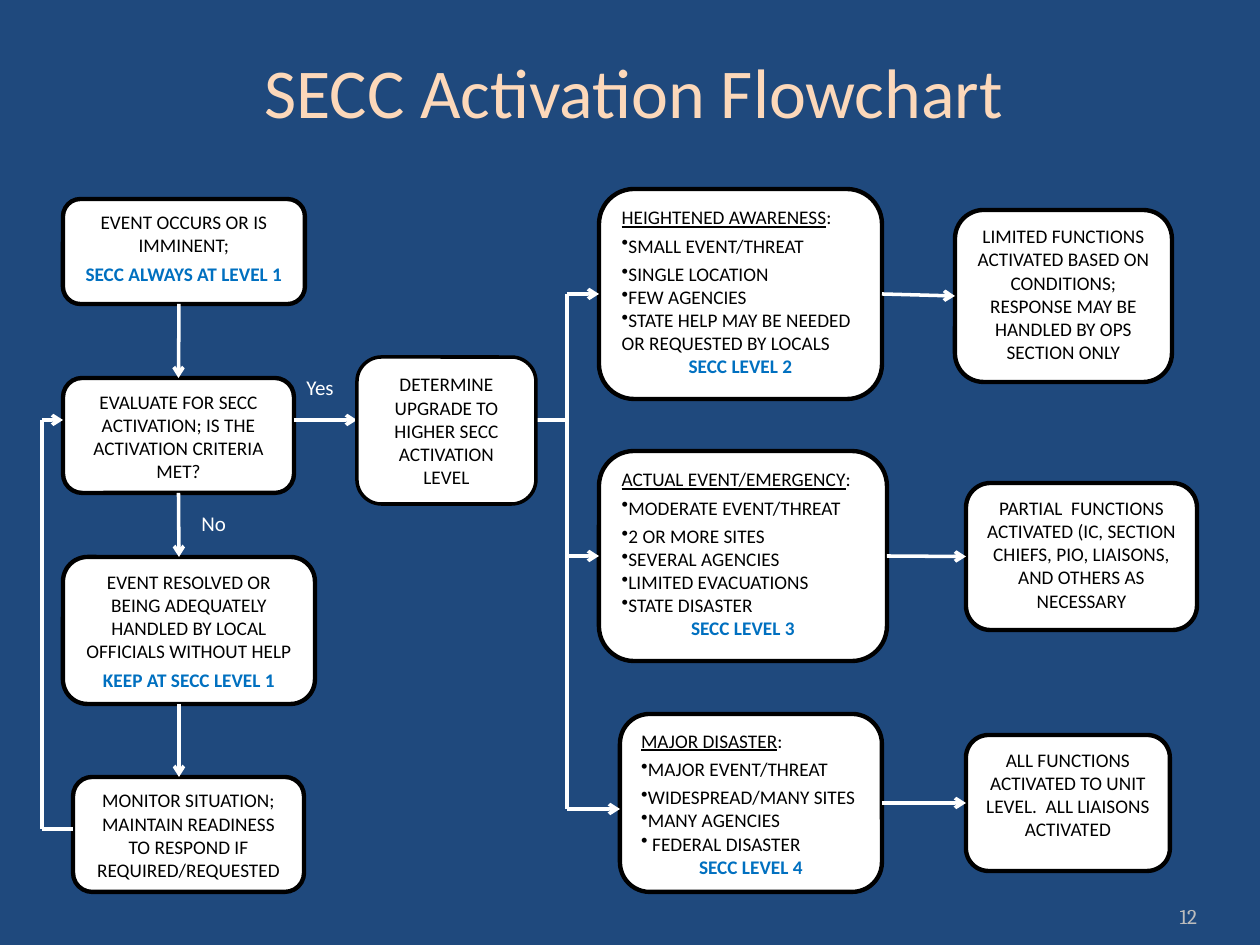
import pptx
import pptx.util
import pptx.dml.color
import pptx.enum.shapes
import pptx.enum.text
import pptx.oxml.ns
import lxml.etree

RGB = pptx.dml.color.RGBColor
NAVY = RGB(0x1F, 0x49, 0x7D)
WHITE = RGB(0xFF, 0xFF, 0xFF)
BLACK = RGB(0, 0, 0)
BLUE = RGB(0, 0x70, 0xC0)
PEACH = RGB(0xFC, 0xD8, 0xBA)
GRAY = RGB(0xBD, 0xBD, 0xBD)

ALIGN = pptx.enum.text.PP_ALIGN
ANCHOR = pptx.enum.text.MSO_ANCHOR
TOP, LEFT, BOTTOM, RIGHT = range(4)


def px(length):
    return round(length * 914400 / 126)


def add_xml(parent, tag, **attributes):
    return lxml.etree.SubElement(parent, pptx.oxml.ns.qn(tag), **attributes)


class Flowchart:
    font = "Calibri"
    body_size = 11
    gap = pptx.util.Pt(3)

    def __init__(self, deck):
        self.page = deck.slides.add_slide(deck.slide_layouts[6])
        self.page.background.fill.solid()
        self.page.background.fill.fore_color.rgb = NAVY

    def style(self, para, size, color, align=ALIGN.LEFT, bold=False, font=None):
        para.alignment = align
        para.font.name = font or self.font
        para.font.size = pptx.util.Pt(size)
        para.font.color.rgb = color
        para.font.bold = bold

    def text(self, place, words, size, color, align=ALIGN.LEFT, font=None, wrap=True):
        box = self.page.shapes.add_textbox(*map(px, place))
        frame = box.text_frame
        frame.word_wrap = wrap
        frame.text = words
        self.style(frame.paragraphs[0], size, color, align, font=font)
        return frame

    def box(self, place, line_width=2.5, anchor=ANCHOR.TOP):
        kind = pptx.enum.shapes.MSO_SHAPE.ROUNDED_RECTANGLE
        box = self.page.shapes.add_shape(kind, *map(px, place))
        box.shadow.inherit = False
        box.fill.solid()
        box.fill.fore_color.rgb = WHITE
        box.line.color.rgb = BLACK
        box.line.width = pptx.util.Pt(line_width)
        box.text_frame.word_wrap = True
        box.text_frame.vertical_anchor = anchor
        return box

    def step(self, place, words, level=None, **options):
        box = self.box(place, **options)
        para = box.text_frame.paragraphs[0]
        para.text = words
        para.space_after = self.gap
        self.style(para, self.body_size, BLACK, ALIGN.CENTER)
        if level:
            self.level(box, level)
        return box

    def level(self, box, words):
        para = box.text_frame.add_paragraph()
        para.text = words
        para.space_after = self.gap
        self.style(para, self.body_size, BLUE, ALIGN.CENTER, bold=True)

    def criteria(self, place, heading, items, level):
        box = self.box(place)
        para = box.text_frame.paragraphs[0]
        para.space_after = self.gap
        self.style(para, self.body_size, BLACK)
        span = para.add_run()
        span.text = heading
        span.font.underline = True
        para.add_run().text = ":"
        for index, item in enumerate(items):
            para = box.text_frame.add_paragraph()
            para.text = item
            para.space_after = self.gap if index == 0 else 0
            self.style(para, self.body_size, BLACK)
            properties = para._p.get_or_add_pPr()
            bullet = add_xml(properties, "a:buChar", char="•")
            properties.find(pptx.oxml.ns.qn("a:defRPr")).addprevious(bullet)
        self.level(box, level)
        return box

    def line(self, start, end, arrow=True, source=None, target=None):
        kind = pptx.enum.shapes.MSO_CONNECTOR.STRAIGHT
        line = self.page.shapes.add_connector(kind, *map(px, start + end))
        line.line.color.rgb = WHITE
        line.line.width = pptx.util.Pt(2)
        if arrow:
            add_xml(line.line._get_or_add_ln(), "a:tailEnd", type="arrow")
        add_xml(line._element.spPr, "a:effectLst")
        if source:
            line.begin_connect(*source)
        if target:
            line.end_connect(*target)


def main():
    deck = pptx.Presentation()
    deck.slide_width, deck.slide_height = px(1260), px(945)
    chart = Flowchart(deck)

    number = chart.text((1092, 885, 105, 50), "12", 12, GRAY, ALIGN.RIGHT, "Cambria")
    number.vertical_anchor = ANCHOR.BOTTOM
    number.margin_left = number.margin_right = 0

    chart.step((63, 199, 242, 105), "EVENT OCCURS OR IS IMMINENT;", "SECC ALWAYS AT LEVEL 1")
    evaluate = chart.step((63, 378, 231, 115),
                          "EVALUATE FOR SECC ACTIVATION; IS THE ACTIVATION CRITERIA MET?")
    chart.step((63, 557, 252, 147),
               "EVENT RESOLVED OR BEING ADEQUATELY HANDLED BY LOCAL OFFICIALS WITHOUT HELP",
               "KEEP AT SECC LEVEL 1")
    chart.step((73, 777, 231, 115),
               "MONITOR SITUATION; MAINTAIN READINESS TO RESPOND IF REQUIRED/REQUESTED")

    heightened = chart.criteria(
        (599, 189, 283, 210), "HEIGHTENED AWARENESS",
        ["SMALL EVENT/THREAT", "SINGLE LOCATION", "FEW AGENCIES",
         "STATE HELP MAY BE NEEDED OR REQUESTED BY LOCALS"], "SECC LEVEL 2")
    actual = chart.criteria(
        (599, 451, 288, 210), "ACTUAL EVENT/EMERGENCY",
        ["MODERATE EVENT/THREAT", "2 OR MORE SITES", "SEVERAL AGENCIES",
         "LIMITED EVACUATIONS", "STATE DISASTER"], "SECC LEVEL 3")
    major = chart.criteria(
        (620, 714, 262, 178), "MAJOR DISASTER",
        ["MAJOR EVENT/THREAT", "WIDESPREAD/MANY SITES", "MANY AGENCIES",
         " FEDERAL DISASTER"], "SECC LEVEL 4")

    limited = chart.step((955, 210, 217, 172),
                         "LIMITED FUNCTIONS ACTIVATED BASED ON CONDITIONS; "
                         "RESPONSE MAY BE HANDLED BY OPS SECTION ONLY")
    partial = chart.step((966, 483, 231, 147),
                         "PARTIAL  FUNCTIONS ACTIVATED (IC, SECTION CHIEFS, PIO, "
                         "LIAISONS, AND OTHERS AS NECESSARY")
    full = chart.step((966, 735, 204, 136),
                      "ALL FUNCTIONS ACTIVATED TO UNIT LEVEL.  ALL LIAISONS ACTIVATED")

    chart.text((252, 42, 829, 116), "SECC Activation Flowchart", 40, PEACH)

    chart.line((179, 304), (179, 378), target=(evaluate, TOP))
    chart.line((179, 493), (179, 557), source=(evaluate, BOTTOM))
    chart.line((179, 704), (179, 777))
    chart.line((294, 420), (357, 420))

    chart.line((535, 420), (567, 420), arrow=False)
    chart.line((567, 294), (567, 809), arrow=False)
    chart.line((567, 294), (599, 294), target=(heightened, LEFT))
    chart.line((567, 556), (599, 556), target=(actual, LEFT))
    chart.line((567, 809), (620, 809))

    chart.line((73, 829), (42, 829), arrow=False)
    chart.line((42, 829), (42, 420), arrow=False)
    chart.line((42, 420), (63, 420))

    chart.line((882, 294), (955, 296), source=(heightened, RIGHT), target=(limited, LEFT))
    chart.line((887, 556), (966, 556), source=(actual, RIGHT), target=(partial, LEFT))
    chart.line((882, 803), (966, 803), source=(major, RIGHT), target=(full, LEFT))

    chart.text((189, 504, 50, 38), "No", 12, WHITE, wrap=False)
    chart.text((294, 368, 53, 38), "Yes", 12, WHITE, wrap=False)
    chart.step((357, 357, 179, 147), "DETERMINE UPGRADE TO HIGHER SECC ACTIVATION LEVEL",
               line_width=2, anchor=ANCHOR.MIDDLE)

    deck.save("out.pptx")


if __name__ == "__main__":
    main()
